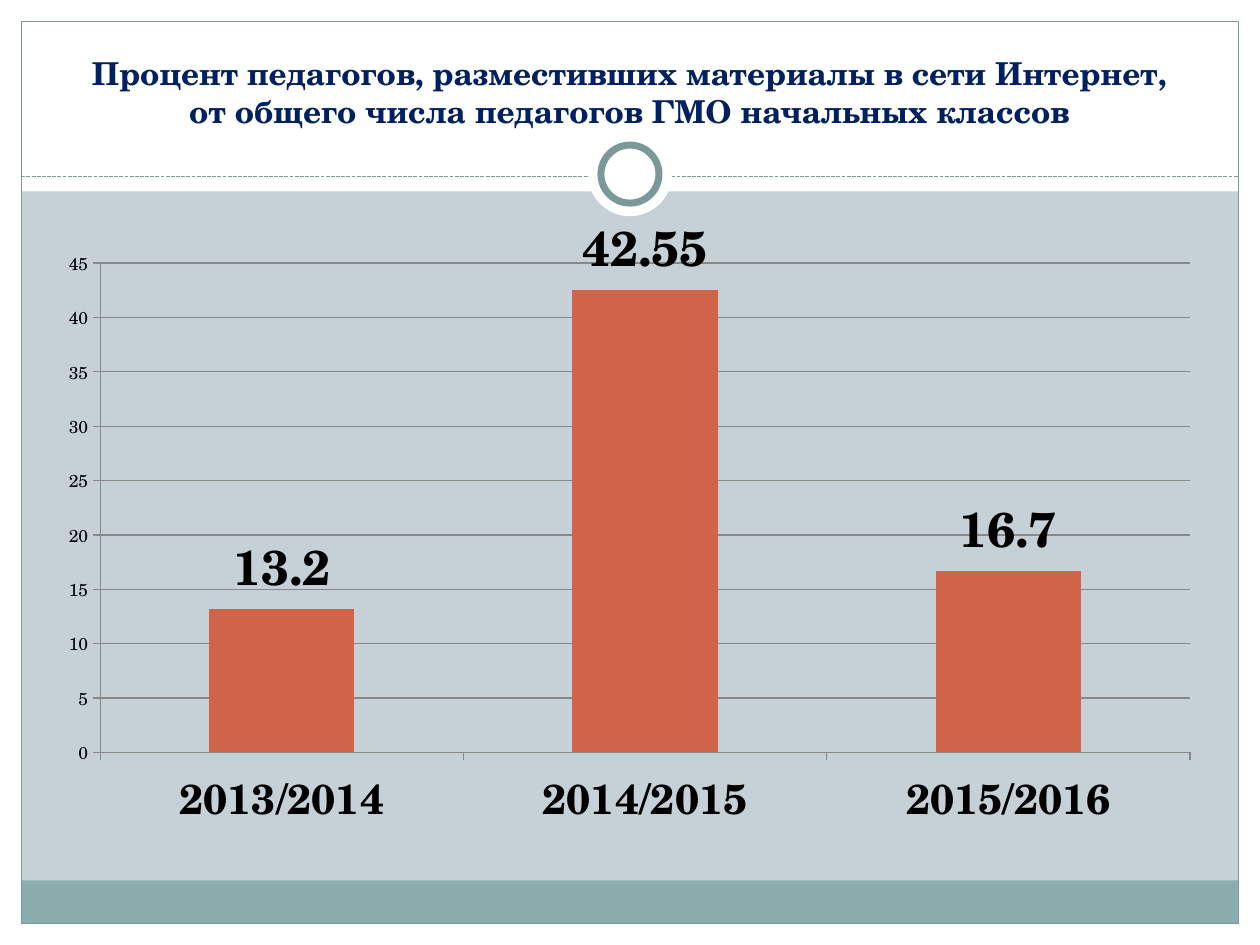
from dataclasses import dataclass
from typing import Optional

from lxml import etree
from pptx import Presentation
from pptx import util as u
from pptx.chart.data import CategoryChartData
from pptx.dml.color import RGBColor
from pptx.enum import chart as ch, dml, shapes, text
from pptx.oxml import parse_xml
from pptx.oxml.ns import nsdecls, qn

WHITE = RGBColor(0xFF, 0xFF, 0xFF)
BLACK = RGBColor(0, 0, 0)
BACKDROP = RGBColor(0xC5, 0xD1, 0xD7)
BAND = RGBColor(0x8C, 0xAD, 0xAE)
EDGE = RGBColor(0x7C, 0x99, 0x9A)
NAVY = RGBColor(0x00, 0x20, 0x60)
BAR = RGBColor(0xD1, 0x63, 0x49)
GRID = RGBColor(0x88, 0x88, 0x88)
FONT = "TeX Gyre Schola"

SLIDE_W, SLIDE_H = 25.4, 19.05
MARGIN = 0.43
HEADER_H = 3.86
RULE_Y = 3.56
RING_Y = 3.51
RECT, OVAL = shapes.MSO_SHAPE.RECTANGLE, shapes.MSO_SHAPE.OVAL


@dataclass
class Panel:
    left: float
    top: float
    width: float
    height: float
    fill: Optional[RGBColor] = WHITE
    line_pt: float = 0
    kind: shapes.MSO_SHAPE = RECT


def disc(diameter: float, line_pt: float = 0) -> Panel:
    return Panel((SLIDE_W - diameter) / 2, RING_Y - diameter / 2,
                 diameter, diameter, WHITE, line_pt, OVAL)


INNER_W, INNER_H = SLIDE_W - 2 * MARGIN, SLIDE_H - 2 * MARGIN
FRAME = [
    Panel(0, SLIDE_H - MARGIN, SLIDE_W, MARGIN),
    Panel(0, 0, SLIDE_W, HEADER_H),
    Panel(0, 0, MARGIN, SLIDE_H),
    Panel(SLIDE_W - MARGIN, 0, MARGIN, SLIDE_H),
    Panel(MARGIN, 17.75, INNER_W, 0.87, BAND),
    Panel(MARGIN, MARGIN, INNER_W, INNER_H, None, 0.75),
]
RING = [disc(1.7), disc(1.17, 4)]


def draw_panel(slide, panel: Panel) -> None:
    shape = slide.shapes.add_shape(panel.kind, u.Cm(panel.left), u.Cm(panel.top),
                                   u.Cm(panel.width), u.Cm(panel.height))
    shape.shadow.inherit = False
    if panel.fill is None:
        shape.fill.background()
    else:
        shape.fill.solid()
        shape.fill.fore_color.rgb = panel.fill
    if panel.line_pt:
        shape.line.color.rgb = EDGE
        shape.line.width = u.Pt(panel.line_pt)
    else:
        shape.line.fill.background()


def draw_rule(slide) -> None:
    rule = slide.shapes.add_connector(
        shapes.MSO_CONNECTOR.STRAIGHT, u.Cm(MARGIN), u.Cm(RULE_Y),
        u.Cm(SLIDE_W - MARGIN), u.Cm(RULE_Y))
    rule.line.color.rgb = EDGE
    rule.line.width = u.Pt(0.75)
    rule.line.dash_style = dml.MSO_LINE.SQUARE_DOT
    etree.SubElement(rule._element.spPr, qn("a:effectLst"))


def set_font(font, size: float, color: RGBColor, bold: bool = False) -> None:
    font.name, font.size, font.bold = FONT, u.Pt(size), bold
    font.color.rgb = color


def fill_title(slide) -> None:
    title = slide.shapes.title
    title.left, title.top = u.Cm(0.84), u.Cm(0.64)
    title.width, title.height = u.Cm(23.7), u.Cm(2.1)
    frame = title.text_frame
    frame.word_wrap = True
    frame.auto_size = text.MSO_AUTO_SIZE.NONE
    frame.vertical_anchor = text.MSO_ANCHOR.BOTTOM
    frame.text = ("Процент педагогов, разместивших материалы в сети Интернет,\v"
                  "от общего числа педагогов ГМО начальных классов")
    heading = frame.paragraphs[0]
    heading.alignment = text.PP_ALIGN.CENTER
    set_font(heading.font, 18, NAVY, True)
    # Bring the title in front of the header panel
    slide.shapes._spTree.append(title._element)


def draw_chart(slide) -> None:
    data = CategoryChartData()
    data.categories = ["2013/2014", "2014/2015", "2015/2016"]
    data.add_series("Series 1", [13.2, 42.55, 16.7])
    chart = slide.shapes.add_chart(
        ch.XL_CHART_TYPE.COLUMN_CLUSTERED, u.Cm(0.84), u.Cm(4.24),
        u.Cm(23.62), u.Cm(12.7), data).chart
    chart.has_legend = chart.has_title = False
    set_font(chart.font, 10, BLACK)

    # Columns and their values
    plot = chart.plots[0]
    plot.gap_width = 150
    plot.vary_by_categories = False
    columns = plot.series[0].format.fill
    columns.solid()
    columns.fore_color.rgb = BAR
    plot.has_data_labels = True
    labels = plot.data_labels
    labels.show_value = True
    labels.position = ch.XL_LABEL_POSITION.OUTSIDE_END
    set_font(labels.font, 28, BLACK, True)

    # Axes
    years, percent = chart.category_axis, chart.value_axis
    set_font(years.tick_labels.font, 24, BLACK, True)
    percent.minimum_scale, percent.maximum_scale, percent.major_unit = 0, 45, 5
    percent.has_major_gridlines = True
    for line in (years.format.line, percent.format.line,
                 percent.major_gridlines.format.line):
        line.color.rgb = GRID
        line.width = u.Pt(0.75)
    for axis in (years, percent):
        axis.major_tick_mark = ch.XL_TICK_MARK.OUTSIDE

    # Place of the plot area, as shares of the chart
    shares = dict(x=0.05, y=0.08, w=0.93, h=0.78)
    modes = "".join(f'<c:{side}Mode val="edge"/>' for side in "xy")
    values = "".join(f'<c:{key} val="{share}"/>' for key, share in shares.items())
    layout = parse_xml(
        f'<c:layout {nsdecls("c")}><c:manualLayout><c:layoutTarget val="inner"/>'
        f'{modes}{values}</c:manualLayout></c:layout>')
    plot_area = chart._chartSpace.find(f'.//{qn("c:plotArea")}')
    for automatic in plot_area.findall(qn("c:layout")):
        plot_area.remove(automatic)
    plot_area.insert(0, layout)


def main() -> None:
    deck = Presentation()
    deck.slide_width, deck.slide_height = u.Cm(SLIDE_W), u.Cm(SLIDE_H)
    slide = deck.slides.add_slide(deck.slide_layouts[5])
    slide.background.fill.solid()
    slide.background.fill.fore_color.rgb = BACKDROP

    # Frame, dashed rule and ring
    for panel in FRAME:
        draw_panel(slide, panel)
    draw_rule(slide)
    for panel in RING:
        draw_panel(slide, panel)

    # Content
    fill_title(slide)
    draw_chart(slide)
    deck.save("out.pptx")


if __name__ == "__main__":
    main()
